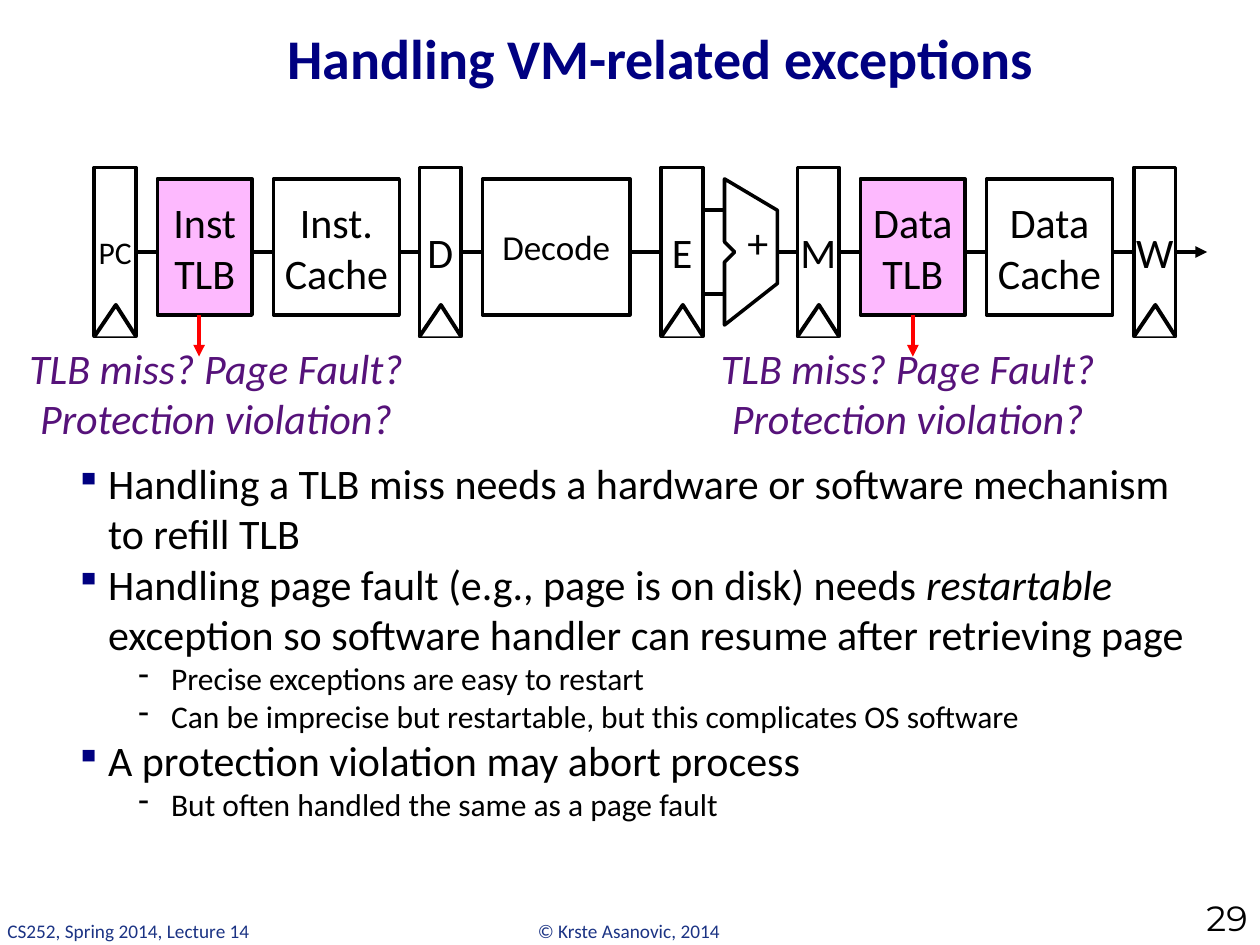
import pptx
import pptx.util
import pptx.dml.color
import pptx.enum.shapes
import pptx.enum.text
import pptx.oxml
import pptx.oxml.ns
from lxml import etree

Inches, Pt = pptx.util.Inches, pptx.util.Pt
RGB = pptx.dml.color.RGBColor.from_string
ALIGN = pptx.enum.text.PP_ALIGN
ANCHOR = pptx.enum.text.MSO_ANCHOR
SHAPE = pptx.enum.shapes.MSO_SHAPE
qn = pptx.oxml.ns.qn
COLORS = {"black": "000000", "white": "FFFFFF", "title": "000081", "bullet": "000080",
          "footer": "1B3384", "tlb": "FDB9FE", "arrow": "FF0000", "question": "56127A"}

prs = pptx.Presentation()
prs.slide_width, prs.slide_height = Inches(10), Inches(7.5)
s = prs.slides.add_slide(prs.slide_layouts[6])


def write(sp, text, size, color="black", align=ALIGN.CENTER, anchor=ANCHOR.MIDDLE,
          wrap=False, inset=None, font="Calibri", bold=False, italic=False):
    tf = sp.text_frame
    tf.text = text
    tf.word_wrap = wrap
    tf.vertical_anchor = anchor
    if inset is not None:
        tf.margin_left = tf.margin_right = tf.margin_top = tf.margin_bottom = Inches(inset)
    for p in tf.paragraphs:
        p.alignment = align
        for r in p.runs:
            r.font.name, r.font.size = font, Pt(size)
            r.font.bold, r.font.italic = bold, italic
            r.font.color.rgb = RGB(COLORS[color])


def outline(sp, color="black", width=2.25, fill=None, arrow=False):
    sp.line.color.rgb = RGB(COLORS[color])
    sp.line.width = Pt(width)
    if fill:
        sp.shadow.inherit = False
        sp.fill.solid()
        sp.fill.fore_color.rgb = RGB(COLORS[fill])
    else:
        if arrow:
            etree.SubElement(sp.line._get_or_add_ln(), qn("a:tailEnd"), type="triangle")
        etree.SubElement(sp._element.spPr, qn("a:effectLst"))


for text, x, w in [("© Krste Asanovic, 2014", 4.17, 1.67),
                   ("CS252, Spring 2014, Lecture 14", -0.04, 2.14)]:
    sp = s.shapes.add_textbox(Inches(x), Inches(7.25), Inches(w), Inches(0.29))
    write(sp, text, 11, "footer", ALIGN.LEFT, ANCHOR.TOP)

sp = s.shapes.add_textbox(Inches(1.33), Inches(0.08), Inches(7.83), Inches(0.75))
write(sp, "Handling VM-related exceptions", 32, "title", wrap=True, bold=True)

sp = s.shapes.add_textbox(Inches(0.5), Inches(3.58), Inches(9.08), Inches(3.42))
body = [
    (0, "Handling a TLB miss needs a hardware or software mechanism to refill TLB"),
    (0, "Handling page fault (e.g., page is on disk) needs |restartable |"
        "exception so software handler can resume after retrieving page"),
    (1, "Precise exceptions are easy to restart"),
    (1, "Can be imprecise but restartable, but this complicates OS software"),
    (0, "A protection violation may abort process"),
    (1, "But often handled the same as a page fault"),
]
tf = sp.text_frame
tf.word_wrap = True
for i, (level, text) in enumerate(body):
    p = tf.paragraphs[0] if i == 0 else tf.add_paragraph()
    p.level = level
    for j, part in enumerate(text.split("|")):
        r = p.add_run()
        r.text = part
        r.font.name, r.font.size = "Calibri", Pt(18 if level else 24)
        r.font.italic = j == 1
        r.font.color.rgb = RGB(COLORS["black"])
    pPr = p._p.get_or_add_pPr()
    pPr.set("marL", str(Inches(0.26 + 0.5 * level)))
    pPr.set("indent", str(Inches(-0.26)))
    if level == 0:
        clr = etree.SubElement(pPr, qn("a:buClr"))
        etree.SubElement(clr, qn("a:srgbClr"), val=COLORS["bullet"])
        etree.SubElement(pPr, qn("a:buSzPct"), val="85000")
    etree.SubElement(pPr, qn("a:buChar"), char="-" if level else "▪")

sp = s.shapes.add_textbox(Inches(9.08), Inches(7.24), Inches(0.92), Inches(0.26))
write(sp, "29", 20, align=ALIGN.RIGHT, anchor=ANCHOR.BOTTOM, wrap=True, font="Montserrat")

wires = []
for x1, x2, arrow in [(6.17, 9.58, True), (1.08, 5.25, False)]:
    cx = s.shapes.add_connector(1, Inches(x1), Inches(2), Inches(x2), Inches(2))
    outline(cx, arrow=arrow)
    wires.append(cx)

registers = {}
for name, x, size in [("PC", 0.75, 18), ("D", 3.33, 24), ("E", 5.25, 24),
                      ("M", 6.33, 24), ("W", 9, 24)]:
    sp = s.shapes.add_shape(SHAPE.RECTANGLE, Inches(x), Inches(1.33), Inches(0.33), Inches(1.34))
    outline(sp, fill="white")
    write(sp, name, size)
    registers[name] = sp
    fb = s.shapes.build_freeform(Inches(x), Inches(2.67))
    fb.add_line_segments([(Inches(x + 0.17), Inches(2.42)), (Inches(x + 0.33), Inches(2.67))],
                         close=False)
    outline(fb.convert_to_shape(), fill="white")
wires[1].begin_connect(registers["PC"], 3)
wires[1].end_connect(registers["E"], 1)

stages = {}
for name, x, w, size, fill, width in [("Inst TLB", 1.25, 0.75, 24, "tlb", 2.25),
                                      ("Inst. Cache", 2.17, 1, 24, "white", 2),
                                      ("Decode", 3.83, 1.17, 20, "white", 2),
                                      ("Data TLB", 6.83, 0.83, 24, "tlb", 2.25),
                                      ("Data Cache", 7.83, 1, 24, "white", 2)]:
    sp = s.shapes.add_shape(SHAPE.RECTANGLE, Inches(x), Inches(1.42), Inches(w), Inches(1.08))
    outline(sp, width=width, fill=fill)
    write(sp, name, size, wrap=True, inset=None if name == "Decode" else 0)
    stages[name] = sp

alu = [(5.75, 1.92), (5.83, 2), (5.75, 2.08), (5.75, 2.58), (6.17, 2.25), (6.17, 1.67)]
fb = s.shapes.build_freeform(Inches(5.75), Inches(1.42))
fb.add_line_segments([(Inches(x), Inches(y)) for x, y in alu], close=True)
outline(fb.convert_to_shape(), width=2, fill="white")
for y in (1.67, 2.33):
    cx = s.shapes.add_connector(1, Inches(5.58), Inches(y), Inches(5.75), Inches(y))
    outline(cx)
sp = s.shapes.add_textbox(Inches(5.83), Inches(1.67), Inches(0.37), Inches(0.5))
write(sp, "+", 24)

for name, x, left in [("Inst TLB", 1.58, 0.07), ("Data TLB", 7.25, 5.56)]:
    cx = s.shapes.add_connector(1, Inches(x), Inches(2.5), Inches(x), Inches(2.83))
    outline(cx, "arrow", arrow=True)
    if name == "Data TLB":
        cx.begin_connect(stages[name], 2)
        cx.end_x = cx.begin_x
    sp = s.shapes.add_textbox(Inches(left), Inches(2.66), Inches(3.29), Inches(0.91))
    write(sp, "TLB miss? Page Fault?\nProtection violation?", 24, "question", italic=True)

prs.save("out.pptx")
